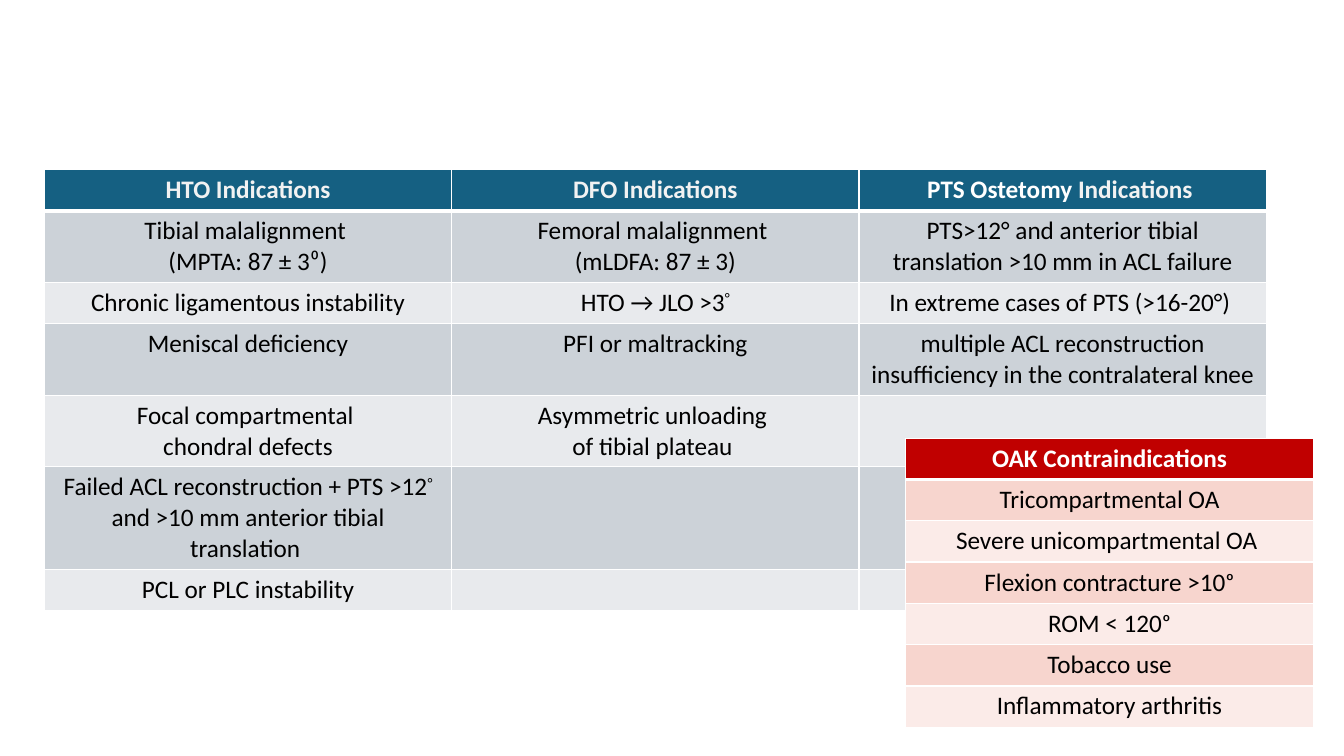
from dataclasses import dataclass

import lxml.etree
import pptx
import pptx.dml.color
import pptx.enum.text
import pptx.oxml.ns
import pptx.util

Inches = pptx.util.Inches
Pt = pptx.util.Pt
ROW_HEIGHT = 0.41
COLORS = {
    "white": "FFFFFF", "off_white": "F2F2F2", "black": "000000",
    "blue": "156082", "blue_band": "CCD2D8", "blue_light": "E8EAED",
    "red": "C00000", "red_band": "F7D5CE", "red_light": "FBEBE8",
}


@dataclass
class Span:
    text: str
    raised: bool = False
    color: str = ""


@dataclass
class Criteria:
    left: float
    top: float
    col_width: float
    height: float
    header_height: float
    hue: str
    header_color: str
    rows: list[list[str | list[Span]]]


INDICATIONS = Criteria(0.44, 1.68, 4.04, 4.32, ROW_HEIGHT, "blue", "off_white", [
    ["HTO Indications", "DFO Indications",
     [Span("PTS Ostetomy ", color="white"), Span("Indications ")]],
    ["Tibial malalignment \n(MPTA: 87 ± 3⁰)", "Femoral malalignment \n(mLDFA: 87 ± 3)",
     "PTS>12° and anterior tibial translation >10 mm in ACL failure"],
    ["Chronic ligamentous instability", [Span("HTO → JLO >3"), Span("°", raised=True)],
     "In extreme cases of PTS (>16-20°) "],
    ["Meniscal deficiency", "PFI or maltracking",
     "multiple ACL reconstruction insufficiency in the contralateral knee"],
    ["Focal compartmental \nchondral defects", "Asymmetric unloading \nof tibial plateau ", ""],
    [[Span("Failed ACL reconstruction + PTS >12"), Span("° ", raised=True),
      Span("and >10 mm anterior tibial translation ")], "", ""],
    ["PCL or PLC instability", "", ""],
])
CONTRAINDICATIONS = Criteria(8.98, 4.35, 4.05, 2.83, 0.28, "red", "white", [
    ["OAK Contraindications"],
    ["Tricompartmental OA"],
    ["Severe unicompartmental OA "],
    ["Flexion contracture >10ᵒ"],
    ["ROM < 120ᵒ"],
    ["Tobacco use"],
    ["Inflammatory arthritis"],
])


def rgb(name: str) -> pptx.dml.color.RGBColor:
    return pptx.dml.color.RGBColor.from_string(COLORS[name])


def set_borders(cell, bottom: float) -> None:
    """Draw white cell edges, with the bottom edge of the given point width."""
    qn = pptx.oxml.ns.qn
    tc_pr = cell._tc.get_or_add_tcPr()
    for side, width in (("L", 1), ("R", 1), ("T", 1), ("B", bottom)):
        ln = lxml.etree.SubElement(tc_pr, qn(f"a:ln{side}"), w=str(Pt(width)))
        fill = lxml.etree.SubElement(ln, qn("a:solidFill"))
        lxml.etree.SubElement(fill, qn("a:srgbClr"), val=COLORS["white"])


def write_cell(cell, content: str | list[Span], color: str, bold: bool) -> None:
    spans = [Span(content)] if isinstance(content, str) else content
    p = cell.text_frame.paragraphs[0]
    p.alignment = pptx.enum.text.PP_ALIGN.CENTER
    for i, span in enumerate(spans):
        if i == 0:
            p.text = span.text
        else:
            p.add_run().text = span.text
        for r in p.runs if i == 0 else p.runs[-1:]:
            r.font.name = "Calibri"
            r.font.size = Pt(18)
            r.font.bold = bold
            r.font.color.rgb = rgb(span.color or color)
            if span.raised:
                r.font._element.set("baseline", "30000")


def add_criteria(s, criteria: Criteria) -> None:
    n_rows, n_cols = len(criteria.rows), len(criteria.rows[0])
    frame = s.shapes.add_table(
        n_rows, n_cols, Inches(criteria.left), Inches(criteria.top),
        Inches(criteria.col_width * n_cols), Inches(criteria.height))
    table = frame.table
    for col in table.columns:
        col.width = Inches(criteria.col_width)
    for i, row in enumerate(criteria.rows):
        header = i == 0
        table.rows[i].height = Inches(criteria.header_height if header else ROW_HEIGHT)
        shade = "" if header else "_band" if i % 2 else "_light"
        for j, content in enumerate(row):
            cell = table.cell(i, j)
            set_borders(cell, 3 if header else 1)
            cell.fill.solid()
            cell.fill.fore_color.rgb = rgb(criteria.hue + shade)
            write_cell(cell, content, criteria.header_color if header else "black", header)
    frame.height = Inches(criteria.height)


def main() -> None:
    prs = pptx.Presentation()
    prs.slide_width, prs.slide_height = Inches(13.33), Inches(7.5)
    s = prs.slides.add_slide(prs.slide_layouts[6])
    for criteria in (INDICATIONS, CONTRAINDICATIONS):
        add_criteria(s, criteria)
    prs.save("out.pptx")


if __name__ == "__main__":
    main()
